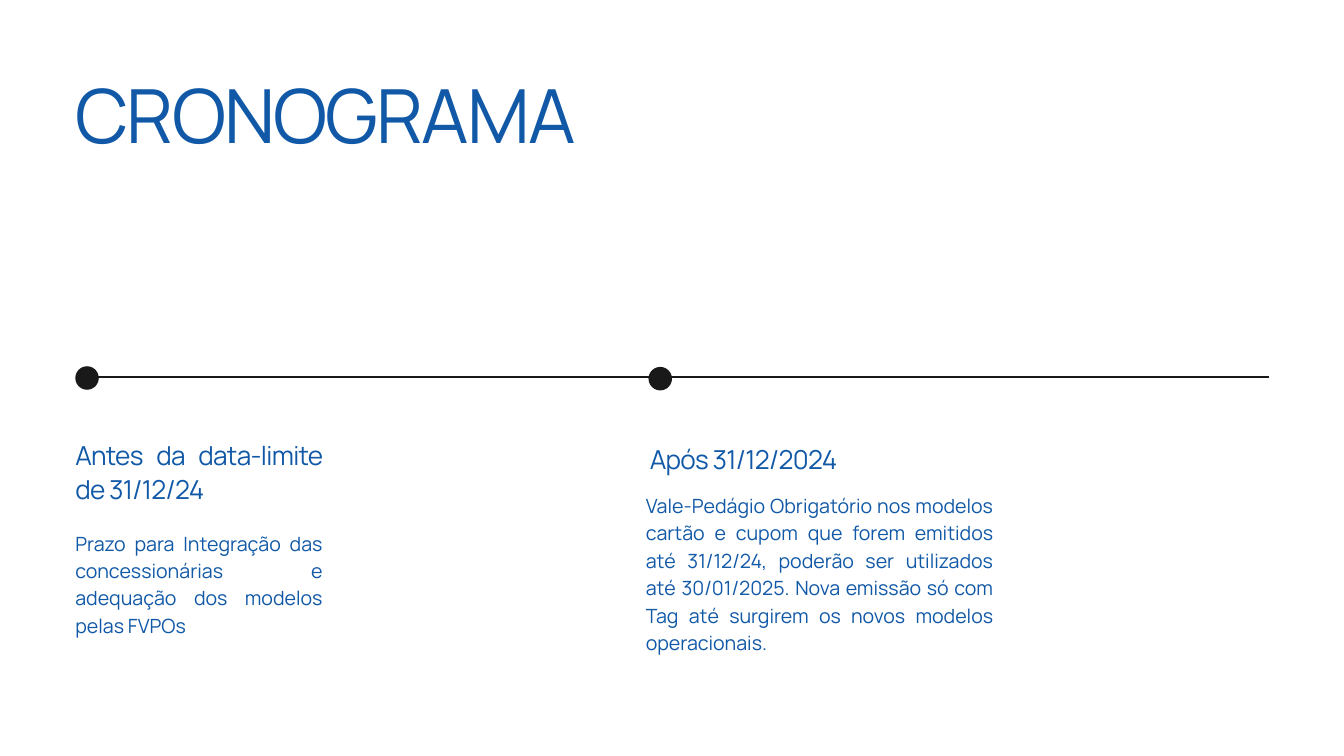
from dataclasses import dataclass

from lxml.etree import SubElement
from pptx import Presentation
from pptx.dml.color import RGBColor
from pptx.enum.shapes import MSO_CONNECTOR, MSO_SHAPE
from pptx.enum.text import PP_ALIGN
from pptx.oxml.ns import qn
from pptx.slide import Slide
from pptx.util import Inches, Pt

COLORS = {"text": "1159A7", "line": "191919"}
FONT = "Manrope"
DOT = 0.35


@dataclass
class Style:
    size: float
    leading: float
    spacing: float = 0


@dataclass
class Label:
    text: str
    left: float
    top: float
    width: float
    height: float
    style: Style
    align: PP_ALIGN = PP_ALIGN.JUSTIFY


@dataclass
class Dot:
    left: float
    top: float


TITLE = Style(80, 96, -2)
HEAD = Style(28, 36.4, -0.7)
BODY = Style(21, 29.4)

DOTS = [Dot(1.12, 5.45), Dot(9.65, 5.46)]
LABELS = [
    Label("CRONOGRAMA", 1.12, 1.03, 17.75, 1.43, TITLE, PP_ALIGN.LEFT),
    Label("Antes da data-limite de 31/12/24", 1.12, 6.5, 3.68, 1.01, HEAD),
    Label("Prazo para Integração das concessionárias e adequação "
          "dos modelos pelas FVPOs", 1.12, 7.85, 3.68, 1.63, BODY),
    Label("Após 31/12/2024", 9.67, 6.56, 3.68, 0.49, HEAD, PP_ALIGN.LEFT),
    Label("Vale-Pedágio Obrigatório nos modelos cartão e cupom que forem "
          "emitidos até 31/12/24, poderão ser utilizados até 30/01/2025. "
          "Nova emissão só com Tag até surgirem os novos modelos "
          "operacionais.", 9.61, 7.29, 5.17, 2.85, BODY),
]


def color(name: str) -> RGBColor:
    return RGBColor.from_string(COLORS[name])


def draw_axis(slide: Slide, left: float, right: float, top: float) -> None:
    axis = slide.shapes.add_connector(
        MSO_CONNECTOR.STRAIGHT,
        Inches(left), Inches(top), Inches(right), Inches(top))
    axis.line.color.rgb = color("line")
    axis.line.width = Pt(1.5)
    SubElement(axis._element.spPr, qn("a:effectLst"))


def draw_dot(slide: Slide, dot: Dot) -> None:
    shape = slide.shapes.add_shape(
        MSO_SHAPE.OVAL, Inches(dot.left), Inches(dot.top),
        Inches(DOT), Inches(DOT))
    shape.shadow.inherit = False
    shape.fill.solid()
    shape.fill.fore_color.rgb = color("line")
    shape.line.fill.background()


def draw_label(slide: Slide, label: Label) -> None:
    box = slide.shapes.add_textbox(
        Inches(label.left), Inches(label.top),
        Inches(label.width), Inches(label.height))
    frame = box.text_frame
    frame.word_wrap = True
    frame.margin_left = frame.margin_right = 0
    frame.margin_top = frame.margin_bottom = 0
    para = frame.paragraphs[0]
    run = para.add_run()
    run.text = label.text
    para.alignment = label.align
    para.line_spacing = Pt(label.style.leading)
    para.font.name = FONT
    para.font.size = Pt(label.style.size)
    para.font.color.rgb = color("text")
    # Letter spacing is held in hundredths of a point
    if label.style.spacing:
        run.font._element.set("spc", str(round(label.style.spacing * 100)))


def main() -> None:
    deck = Presentation()
    deck.slide_width, deck.slide_height = Inches(20), Inches(11.25)
    slide = deck.slides.add_slide(deck.slide_layouts[6])

    # Timeline
    draw_axis(slide, 1.3, 18.88, 5.61)
    for dot in DOTS:
        draw_dot(slide, dot)

    # Title and milestones
    for label in LABELS:
        draw_label(slide, label)

    deck.save("out.pptx")


if __name__ == "__main__":
    main()
